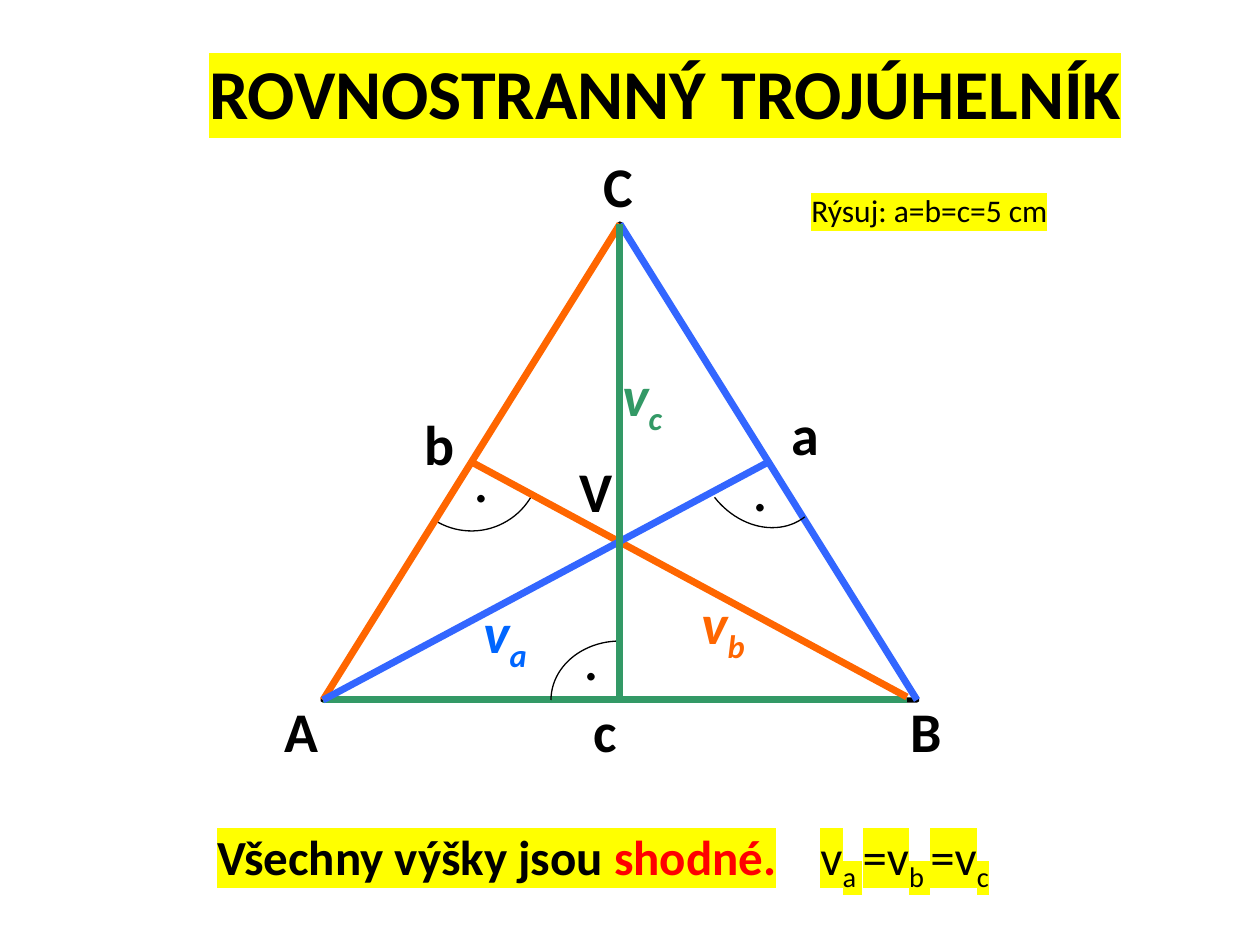
from lxml.etree import SubElement
from pptx import Presentation
from pptx.dml.color import RGBColor
from pptx.enum.shapes import MSO_CONNECTOR, MSO_SHAPE
from pptx.enum.text import MSO_AUTO_SIZE
from pptx.oxml.ns import qn
from pptx.util import Emu, Pt

COLORS = {
    "black": "000000", "yellow": "FFFF00", "red": "FF0000",
    "green": "339966", "blue": "3366FF", "orange": "FF6600",
    "label blue": "0066FF",
}
FONT = "Calibri"
EMU_PER_PX = 914400 / 126


def px(length):
    return Emu(round(length * EMU_PER_PX))


def rgb(name):
    return RGBColor.from_string(COLORS[name])


def add_text(slide, box, pieces, size, bold=False, italic=False, highlight=None):
    """Pieces are (text, color, bold, is_subscript); bold None means the box's own."""
    frame = slide.shapes.add_textbox(*map(px, box)).text_frame
    frame.word_wrap = True
    frame.auto_size = MSO_AUTO_SIZE.SHAPE_TO_FIT_TEXT
    paragraph = frame.paragraphs[0]
    for text, color, piece_bold, subscript in pieces:
        run = paragraph.add_run()
        run.text = text
        font = run.font
        font.name, font.size, font.italic = FONT, Pt(size), italic
        font.bold = bold if piece_bold is None else piece_bold
        font.color.rgb = rgb(color)
        properties = run._r.get_or_add_rPr()
        if subscript:
            properties.set("baseline", "-25000")
        if highlight:
            mark = SubElement(properties, qn("a:highlight"))
            SubElement(mark, qn("a:srgbClr")).set("val", COLORS[highlight])
            properties.find(qn("a:solidFill")).addnext(mark)
    return paragraph


def plain(text, color="black"):
    return [(text, color, None, False)]


def add_line(slide, start, end, color):
    line = slide.shapes.add_connector(MSO_CONNECTOR.STRAIGHT, *map(px, start + end))
    line.line.color.rgb = rgb(color)
    line.line.width = Pt(4)
    SubElement(line._element.spPr, qn("a:effectLst"))


def add_right_angle(slide, center, radii, rotation):
    """Quarter arc starting at the rotation angle, going clockwise."""
    (x, y), (rx, ry) = center, radii
    arc = slide.shapes.add_shape(
        MSO_SHAPE.ARC, px(x - rx), px(y - ry), px(2 * rx), px(2 * ry))
    arc.adjustments[0], arc.adjustments[1] = 0, 54  # 0 and 90 degrees
    arc.rotation = rotation
    arc.shadow.inherit = False
    arc.fill.background()
    arc.line.color.rgb = rgb("black")
    arc.line.width = Pt(0.75)


def add_title(slide, box):
    add_text(slide, box, plain("ROVNOSTRANNÝ TROJÚHELNÍK"), 40, bold=True,
             highlight="yellow")


def add_task(slide, box):
    add_text(slide, box, plain("Rýsuj: a=b=c=5 cm"), 18, highlight="yellow")


def add_triangle(slide, box):
    left, top, width, height = box

    def at(x, y):
        return left + x, top + y

    # Outline
    outline = slide.shapes.add_shape(MSO_SHAPE.ISOSCELES_TRIANGLE, *map(px, box))
    outline.shadow.inherit = False
    outline.fill.background()
    outline.line.color.rgb = rgb("black")
    outline.line.width = Pt(3)

    # Vertices and the feet of the heights
    corner_a, corner_b, corner_c = at(0, height), at(width, height), at(width / 2, 0)
    foot_a = at(width * 3 / 4, height / 2)
    foot_b = at(width / 4, height / 2)
    foot_c = at(width / 2, height)

    # Sides
    add_line(slide, at(width - 10, height), corner_a, "green")
    add_line(slide, corner_c, corner_b, "blue")
    add_line(slide, corner_a, corner_c, "orange")

    # Right angles
    add_right_angle(slide, foot_c, (69, 59), 180)
    add_right_angle(slide, foot_b, (69, 69), 29)
    add_right_angle(slide, at(438, 237), (71, 59), 52)
    for x, y in ((248, 387), (417, 218), (138, 209)):
        add_text(slide, (*at(x, y), 89, 88), plain("."), 36)

    # Heights
    add_line(slide, at(width - 10, height - 3), foot_b, "orange")
    add_line(slide, foot_a, corner_a, "blue")
    add_line(slide, corner_c, foot_c, "green")

    # Names of points and sides
    for name, x, y in (("A", -51, 466), ("B", 575, 466), ("C", 268, -79),
                       ("b", 89, 179), ("c", 258, 466), ("a", 456, 169),
                       ("V", 244, 226)):
        add_text(slide, (*at(x, y), 79, 79), plain(name), 32, bold=True)

    # Names of heights
    for side, color, x, y, label_width in (("b", "orange", 366, 358, 110),
                                           ("c", "green", 287, 130, 77),
                                           ("a", "label blue", 148, 367, 77)):
        pieces = plain("v", color) + [(side, color, None, True)]
        add_text(slide, (*at(x, y), label_width, 79), pieces, 32,
                 bold=True, italic=True)


def add_conclusion(slide, box):
    pieces = plain("Všechny výšky jsou ") + plain("shodné.\t", "red")
    for text, subscript in (("v", False), ("a ", True), ("=v", False),
                            ("b ", True), ("=v", False), ("c", True)):
        pieces.append((text, "black", False, subscript))
    paragraph = add_text(slide, box, pieces, 28, bold=True, highlight="yellow")
    # Tab stop in front of the equation
    tabs = SubElement(paragraph._p.get_or_add_pPr(), qn("a:tabLst"))
    stop = SubElement(tabs, qn("a:tab"))
    stop.set("pos", str(px(603)))
    stop.set("algn", "l")


def main():
    deck = Presentation()
    deck.slide_width, deck.slide_height = px(1260), px(945)
    slide = deck.slides.add_slide(deck.slide_layouts[6])
    add_title(slide, (197, 43, 983, 97))
    add_triangle(slide, (323, 224, 594, 476))
    add_conclusion(slide, (205, 820, 849, 72))
    add_task(slide, (799, 185, 338, 50))
    deck.save("out.pptx")


if __name__ == "__main__":
    main()
